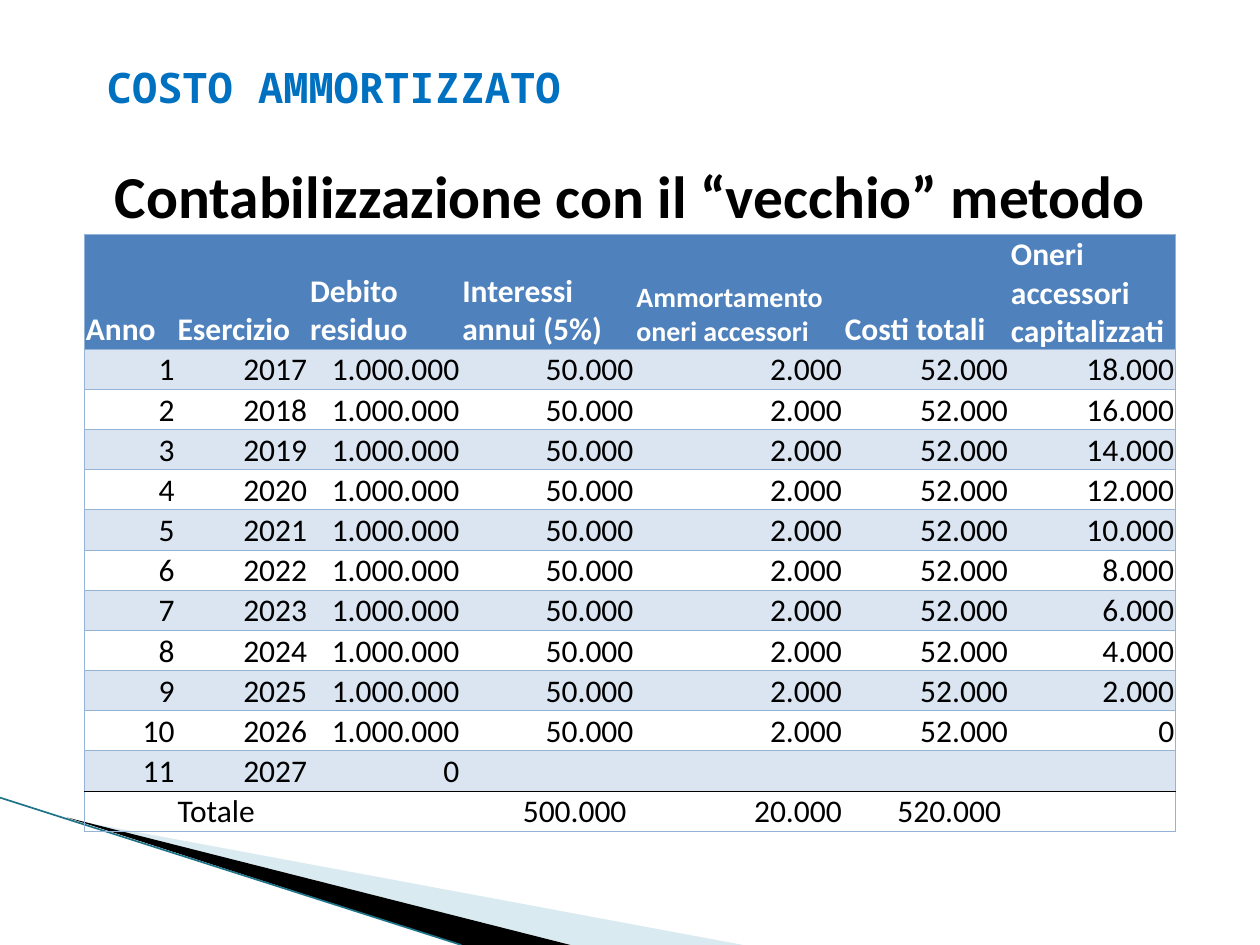
from dataclasses import dataclass

from lxml.etree import SubElement
from pptx import Presentation
from pptx.dml.color import RGBColor
from pptx.enum.shapes import MSO_CONNECTOR
from pptx.enum.text import MSO_ANCHOR, PP_ALIGN
from pptx.oxml.ns import qn
from pptx.util import Cm, Pt


@dataclass(frozen=True)
class Theme:
    body_font: str = "Calibri"
    title_font: str = "Noto Sans Mono"
    title_size: float = 24
    heading_size: float = 34
    table_size: float = 18
    small_header_size: float = 16
    border_width: float = 0.5
    title: str = "0070C0"
    text: str = "000000"
    header_text: str = "FFFFFF"
    header_fill: str = "4F81BD"
    band_fill: str = "DBE5F1"
    border: str = "95B3D7"
    total_rule: str = "000000"
    wave_light: str = "A0CBDC"
    wave_dark: str = "000000"
    wave_edge: str = "1F7388"


NO_STYLE_TABLE = "{2D5ABB26-0587-4C30-8999-92F81FD0307C}"

HEADERS = ["Anno", "Esercizio", "Debito residuo", "Interessi annui (5%)",
           "Ammortamento oneri accessori", "Costi totali",
           "Oneri accessori capitalizzati"]
COLUMN_WIDTHS = [1.85, 2.67, 3.07, 3.51, 4.2, 3.35, 3.35]
SMALL_HEADER_COLUMN = 4
ACCOUNTING_COLUMNS = (3, 5)

DEBT, INTEREST, FEE_SHARE, YEARS = 1_000_000, 50_000, 2_000, 10


def italian(amount):
    return f"{amount:,}".replace(",", ".")


def schedule():
    """Rows of the repayment plan: header, one per year, extinction, totals."""
    cost = INTEREST + FEE_SHARE
    yearly = [
        [str(year), str(2016 + year),
         *map(italian, (DEBT, INTEREST, FEE_SHARE, cost,
                        FEE_SHARE * (YEARS - year)))]
        for year in range(1, YEARS + 1)
    ]
    extinction = ["11", "2027", "0", "", "", "", ""]
    totals = ["", "Totale", "",
              *(italian(YEARS * share) for share in (INTEREST, FEE_SHARE, cost)),
              ""]
    return [HEADERS, *yearly, extinction, totals]


class SlideBuilder:
    def __init__(self, slide, theme):
        self.slide = slide
        self.theme = theme

    def style(self, paragraph, size, color, bold=False, font=None):
        for run in paragraph.runs:
            run.font.name = font or self.theme.body_font
            run.font.size = Pt(size)
            run.font.bold = bold
            run.font.color.rgb = RGBColor.from_string(color)

    def title(self, text, left, top, width, height):
        title = self.slide.shapes.title
        title.left, title.top = Cm(left), Cm(top)
        title.width, title.height = Cm(width), Cm(height)
        frame = title.text_frame
        frame.text = text
        frame.vertical_anchor = MSO_ANCHOR.MIDDLE
        frame.paragraphs[0].alignment = PP_ALIGN.LEFT
        self.style(frame.paragraphs[0], self.theme.title_size, self.theme.title,
                   True, self.theme.title_font)

    def heading(self, text, left, top, width, height):
        frame = self.slide.shapes.add_textbox(
            Cm(left), Cm(top), Cm(width), Cm(height)).text_frame
        frame.word_wrap = True
        frame.vertical_anchor = MSO_ANCHOR.MIDDLE
        frame.text = text
        frame.paragraphs[0].alignment = PP_ALIGN.CENTER
        self.style(frame.paragraphs[0], self.theme.heading_size,
                   self.theme.text, True)

    def wave(self, corners, color, opacity=100):
        start, *others = [(Cm(x), Cm(y)) for x, y in corners]
        outline = self.slide.shapes.build_freeform(*start)
        outline.add_line_segments(others, close=True)
        wave = outline.convert_to_shape()
        wave.shadow.inherit = False
        wave.line.fill.background()
        wave.fill.solid()
        wave.fill.fore_color.rgb = RGBColor.from_string(color)
        if opacity < 100:
            rgb = wave.fill._xPr.find(f".//{qn('a:srgbClr')}")
            SubElement(rgb, qn("a:alpha"), val=str(opacity * 1000))

    def line(self, start, end, color, width):
        line = self.slide.shapes.add_connector(
            MSO_CONNECTOR.STRAIGHT, *map(Cm, start + end))
        line.line.color.rgb = RGBColor.from_string(color)
        line.line.width = Pt(width)
        SubElement(line._element.spPr, qn("a:effectLst"))

    def cell_borders(self, cell, colors):
        """Draw the sides in colors (L, R, T, B order); None hides a side."""
        properties = cell._tc.get_or_add_tcPr()
        for side, color in colors.items():
            border = SubElement(properties, qn(f"a:ln{side}"),
                                w=str(Pt(self.theme.border_width)))
            if color:
                fill = SubElement(border, qn("a:solidFill"))
                SubElement(fill, qn("a:srgbClr"), val=color)
            else:
                SubElement(border, qn("a:noFill"))

    def table(self, rows, left, top, widths, header_height, row_height):
        height = header_height + row_height * (len(rows) - 1)
        frame = self.slide.shapes.add_table(
            len(rows), len(widths), Cm(left), Cm(top), Cm(sum(widths)), Cm(height))
        table = frame.table
        table._tbl.tblPr.find(qn("a:tableStyleId")).text = NO_STYLE_TABLE
        table.horz_banding = False
        for column, width in zip(table.columns, widths):
            column.width = Cm(width)
        for index, row in enumerate(table.rows):
            row.height = Cm(row_height if index else header_height)
            for column, cell in enumerate(row.cells):
                self.cell(cell, rows[index][column], index, column,
                          len(rows) - 1, len(widths) - 1)

    def cell(self, cell, text, row, column, last_row, last_column):
        theme = self.theme
        is_header, is_total = row == 0, row == last_row
        cell.margin_left = cell.margin_right = cell.margin_top = Cm(0.03)
        cell.margin_bottom = 0
        if is_total and column in ACCOUNTING_COLUMNS:
            cell.margin_right = Cm(0.17)
        cell.vertical_anchor = MSO_ANCHOR.BOTTOM
        self.cell_borders(cell, {
            "L": theme.border if column == 0 else None,
            "R": theme.border if column == last_column else None,
            "T": theme.total_rule if is_total else theme.border,
            "B": theme.total_rule if row == last_row - 1 else theme.border,
        })
        if is_header or row % 2:
            cell.fill.solid()
            cell.fill.fore_color.rgb = RGBColor.from_string(
                theme.header_fill if is_header else theme.band_fill)
        else:
            cell.fill.background()
        if not text:
            return
        cell.text_frame.text = text
        paragraph = cell.text_frame.paragraphs[0]
        is_number = text[0].isdigit()
        paragraph.alignment = PP_ALIGN.RIGHT if is_number else PP_ALIGN.LEFT
        is_small = is_header and column == SMALL_HEADER_COLUMN
        self.style(paragraph,
                   theme.small_header_size if is_small else theme.table_size,
                   theme.header_text if is_header else theme.text, is_header)


def main():
    presentation = Presentation()
    presentation.slide_width, presentation.slide_height = Cm(25.4), Cm(19.05)
    theme = Theme()
    title_only = presentation.slide_layouts[5]
    builder = SlideBuilder(presentation.slides.add_slide(title_only), theme)

    builder.wave([(1.4, 16.52), (14.98, 19.05), (11.5, 19.05)],
                 theme.wave_light, opacity=40)
    builder.wave([(1.35, 16.48), (11.5, 19.05), (9.3, 19.05)], theme.wave_dark)
    builder.line((0, 16.08), (9.3, 19.05), theme.wave_edge, 0.95)
    builder.heading("Contabilizzazione con il “vecchio” metodo",
                    0, 2.34, 25.4, 3.18)
    builder.title("COSTO AMMORTIZZATO", 1.9, 0.53, 17.6, 2.44)
    builder.table(schedule(), 1.7, 4.72, COLUMN_WIDTHS,
                  header_height=2.3, row_height=0.81)

    presentation.save("out.pptx")


if __name__ == "__main__":
    main()
